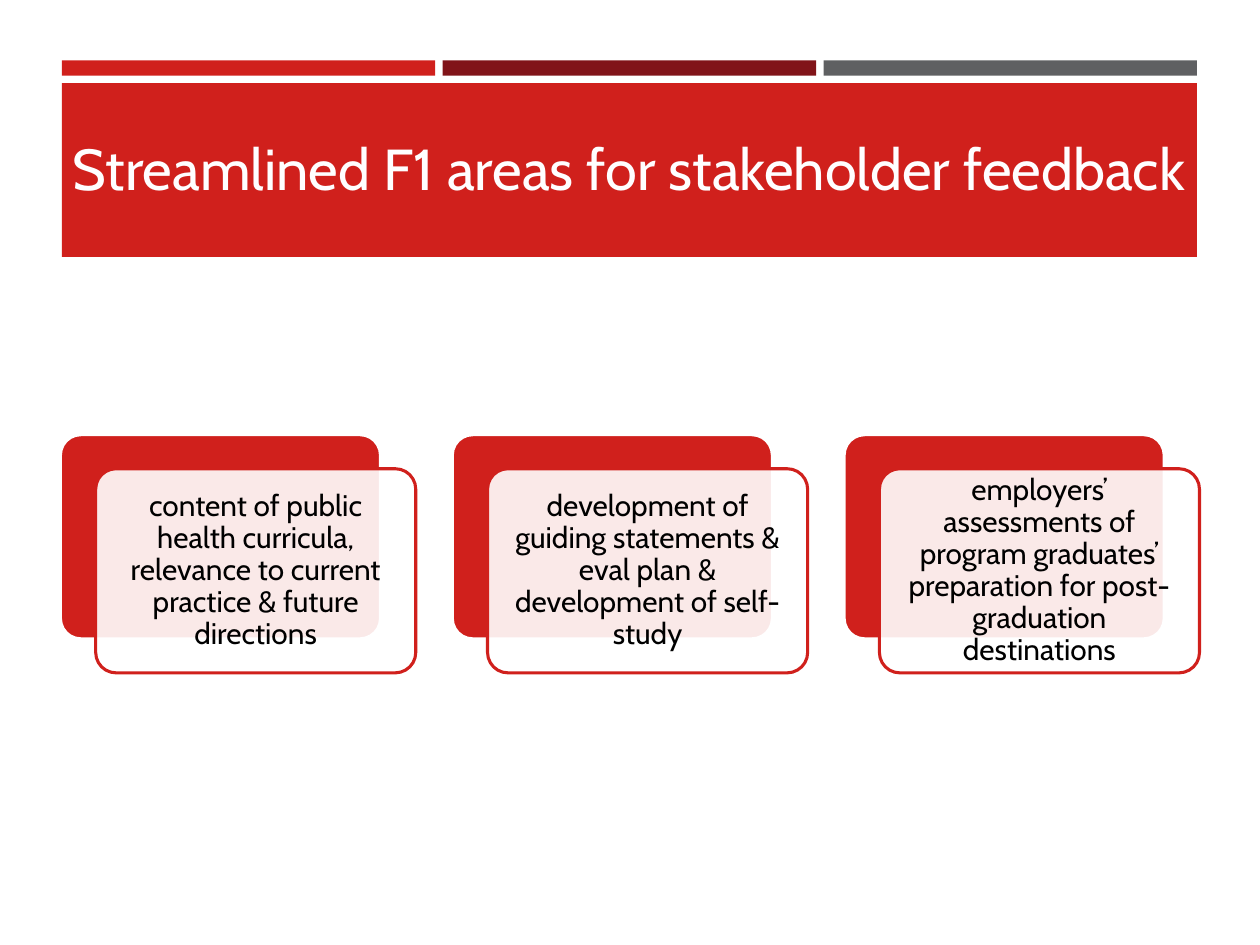
"""Build the slide on streamlined F1 areas for stakeholder feedback."""
import pptx
import pptx.dml.color
import pptx.enum.shapes
import pptx.enum.text
import pptx.oxml
import pptx.oxml.ns
import pptx.util

HEADLINE = "Streamlined F1 areas for stakeholder feedback"
AREAS = [
    "content of public health curricula, relevance to current practice & future directions",
    "development of guiding statements & eval plan & development of self-study",
    "employers’ assessments of program graduates’ preparation for post-graduation destinations",
]
THEME = {
    "font": "Cabin", "headline_size": 33, "area_size": 17, "outline": 1.75,
    "red": "D0201C", "maroon": "811419", "grey": "5F6062",
    "white": "FFFFFF", "headline": "FFFEFF", "black": "000000",
}
STRIPES = ["red", "maroon", "grey"]

SLIDE_W, SLIDE_H = 10, 7.5
MARGIN = 0.49
BAND_W = 9.01
STRIPE_GAP = 0.06
STRIPE_W = (BAND_W - STRIPE_GAP * (len(STRIPES) - 1)) / len(STRIPES)
CARD_LEFT, CARD_TOP, CARD_W, CARD_H = 0.48, 3.45, 2.54, 1.62
CARD_PITCH = 3.11
CARD_SHIFT = 0.28
CARD_DROP = 0.27

RECTANGLE = pptx.enum.shapes.MSO_SHAPE.RECTANGLE
ROUNDED = pptx.enum.shapes.MSO_SHAPE.ROUNDED_RECTANGLE


def colour(name):
    return pptx.dml.color.RGBColor.from_string(THEME[name])


def add_block(slide, kind, box, fill, outline=None):
    block = slide.shapes.add_shape(kind, *map(pptx.util.Inches, box))
    block.shadow.inherit = False
    block.fill.solid()
    block.fill.fore_color.rgb = colour(fill)
    if outline:
        block.line.color.rgb = colour(outline)
        block.line.width = pptx.util.Pt(THEME["outline"])
    else:
        block.line.fill.background()
    if kind == ROUNDED:
        block.adjustments[0] = 0.1
    return block


def set_opacity(block, percent):
    rgb = block.fill._xPr.find(".//" + pptx.oxml.ns.qn("a:srgbClr"))
    alpha = pptx.oxml.parse_xml(
        f'<a:alpha {pptx.oxml.ns.nsdecls("a")} val="{percent * 1000}"/>')
    rgb.append(alpha)


def write(holder, words, size, ink, align, insets, spacing=1.0):
    frame = holder.text_frame
    frame.word_wrap = True
    frame.vertical_anchor = pptx.enum.text.MSO_ANCHOR.MIDDLE
    (frame.margin_left, frame.margin_top,
     frame.margin_right, frame.margin_bottom) = map(pptx.util.Inches, insets)
    paragraph = frame.paragraphs[0]
    paragraph.alignment = align
    paragraph.line_spacing = spacing
    run = paragraph.add_run()
    run.text = words
    run.font.name = THEME["font"]
    run.font.size = pptx.util.Pt(THEME[size])
    run.font.color.rgb = colour(ink)


def add_header(slide):
    for column, fill in enumerate(STRIPES):
        left = MARGIN + column * (STRIPE_W + STRIPE_GAP)
        add_block(slide, RECTANGLE, (left, 0.48, STRIPE_W, 0.12), fill)
    add_block(slide, RECTANGLE, (MARGIN, 0.66, BAND_W, 1.38), "red")
    headline = slide.shapes.add_textbox(
        *map(pptx.util.Inches, (0.48, 0.77, 9.05, 1.11)))
    write(headline, HEADLINE, "headline_size", "headline",
          pptx.enum.text.PP_ALIGN.LEFT, (0.1, 0.05, 0, 0.05))


def add_area(slide, column, words):
    left = CARD_LEFT + column * CARD_PITCH
    add_block(slide, ROUNDED, (left, CARD_TOP, CARD_W, CARD_H), "red", "white")
    card = add_block(
        slide, ROUNDED,
        (left + CARD_SHIFT, CARD_TOP + CARD_DROP, CARD_W, CARD_H), "white", "red")
    set_opacity(card, 90)
    write(card, words, "area_size", "black",
          pptx.enum.text.PP_ALIGN.CENTER, (0.07,) * 4, 0.9)


def main():
    deck = pptx.Presentation()
    deck.slide_width = pptx.util.Inches(SLIDE_W)
    deck.slide_height = pptx.util.Inches(SLIDE_H)
    slide = deck.slides.add_slide(deck.slide_layouts[6])
    add_header(slide)
    for column, words in enumerate(AREAS):
        add_area(slide, column, words)
    deck.save("out.pptx")


if __name__ == "__main__":
    main()
